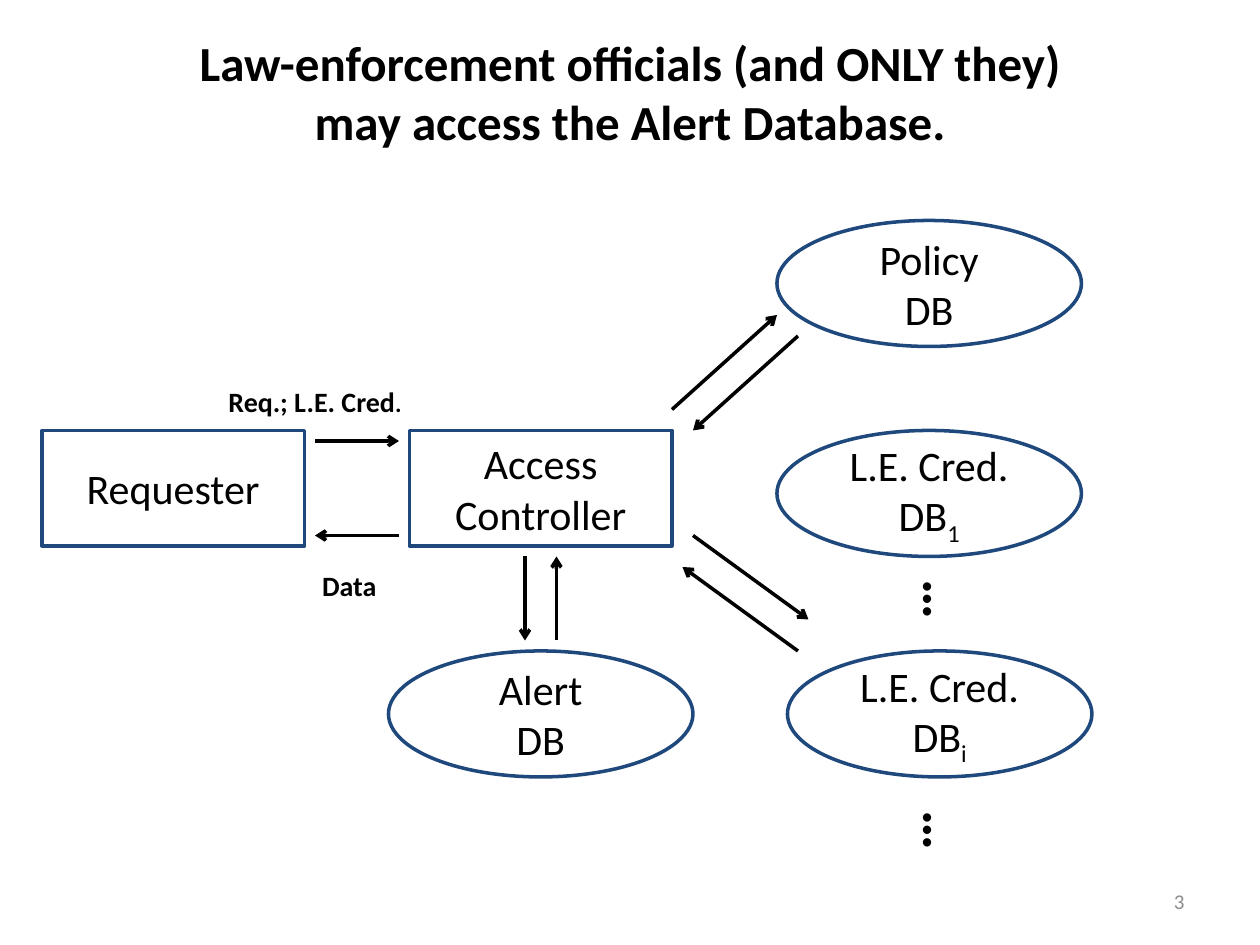
from lxml.etree import SubElement
from pptx import Presentation
from pptx.dml.color import RGBColor
from pptx.enum.shapes import MSO_CONNECTOR as Line, MSO_SHAPE as Shape
from pptx.enum.text import MSO_ANCHOR as Anchor, MSO_AUTO_SIZE as Fit, PP_ALIGN as Align
from pptx.oxml.ns import qn
from pptx.util import Inches, Pt

# Content: each paragraph is a list of (text, format) spans.
# Places are in cells of a grid with 12 cells to the inch.
TITLE = ["Law-enforcement officials (and ONLY they)", "may access the Alert Database."]
BOX_SIZE, DATABASE_SIZE = (25, 11), (29, 12)
SUBSCRIPT = {"baseline": -25}

NODES = [
    (Shape.RECTANGLE, (4, 41), BOX_SIZE, ["Requester"]),
    (Shape.RECTANGLE, (39, 41), BOX_SIZE, ["Access", "Controller"]),
    (Shape.OVAL, (37, 62), DATABASE_SIZE, ["Alert", "DB"]),
    (Shape.OVAL, (74, 21), DATABASE_SIZE, ["Policy", "DB"]),
    (Shape.OVAL, (74, 41), DATABASE_SIZE, ["L.E. Cred.", [("DB", {}), ("1", SUBSCRIPT)]]),
    (Shape.OVAL, (75, 62), DATABASE_SIZE, ["L.E. Cred.", [("DB", {}), ("i", SUBSCRIPT)]]),
]
ARROWS = [  # start, tip
    ((30, 42), (38, 42)), ((38, 51), (30, 51)),  # requester
    ((50, 53), (50, 61)), ((53, 61), (53, 53)),  # alert database
    ((64, 39), (74, 30)), ((76, 32), (66, 41)),  # policy database
    ((66, 51), (77, 59)), ((76, 62), (65, 54)),  # credential databases
]
LABELS = [  # place, left inset in inches, paragraph
    ((19, 36, 28, 4.4), 0.23, [("Req.; L.E. Cred", {}), (".", {"size": 14})]),
    ((29, 53.6, 11, 4.4), 0.14, "Data"),
]
ELLIPSIS_CENTERS = [(90, 57.1), (90, 79.1)]
ELLIPSIS_SIZE = (6.2, 7.7)
PAGE_NUMBER = "3"


def grid(*cells):
    return [Inches(cell / 12) for cell in cells]


def color(hex_text):
    return RGBColor.from_string(hex_text)


def write(frame, paragraphs, size=24, bold=False, ink="000000",
          align=Align.LEFT, anchor=Anchor.TOP, wrap=True):
    frame.word_wrap = wrap
    frame.auto_size = Fit.NONE
    frame.vertical_anchor = anchor
    for index, spans in enumerate(paragraphs):
        para = frame.paragraphs[0] if index == 0 else frame.add_paragraph()
        para.alignment = align
        for text, style in [(spans, {})] if isinstance(spans, str) else spans:
            span = para.add_run()
            span.text = text
            span.font.name = "Calibri"
            span.font.size = Pt(style.get("size", size))
            span.font.bold = bold
            span.font.color.rgb = color(ink)
            if "baseline" in style:
                span._r.get_or_add_rPr().set("baseline", str(style["baseline"] * 1000))


def add_node(page, kind, corner, size, paragraphs):
    node = page.shapes.add_shape(kind, *grid(*corner, *size))
    node.shadow.inherit = False
    node.fill.background()
    node.line.color.rgb = color("1F497D")
    node.line.width = Pt(2)
    write(node.text_frame, paragraphs, align=Align.CENTER, anchor=Anchor.MIDDLE)


def add_arrow(page, start, tip):
    arrow = page.shapes.add_connector(Line.STRAIGHT, *grid(*start, *tip))
    arrow.line.color.rgb = color("000000")
    arrow.line.width = Pt(2)
    SubElement(arrow.line._get_or_add_ln(), qn("a:tailEnd"), type="arrow")
    SubElement(arrow._element.spPr, qn("a:effectLst"))


def add_text(page, place, paragraphs, **style):
    box = page.shapes.add_textbox(*grid(*place))
    write(box.text_frame, paragraphs, **style)
    return box


def main():
    deck = Presentation()
    deck.slide_width, deck.slide_height = Inches(10), Inches(7.5)
    page = deck.slides.add_slide(deck.slide_layouts[5])

    # Title
    title = page.shapes.title
    title.left, title.top, title.width, title.height = grid(0, 2.5, 120, 12.5)
    write(title.text_frame, TITLE, size=28, bold=True, align=Align.CENTER)

    # Diagram
    for node in NODES:
        add_node(page, *node)
    for arrow in ARROWS:
        add_arrow(page, *arrow)

    # Arrow labels
    for place, inset, paragraph in LABELS:
        label = add_text(page, place, [paragraph], size=16, bold=True)
        label.text_frame.margin_left = Inches(inset)

    # Vertical ellipses between the credential databases
    width, height = ELLIPSIS_SIZE
    for x, y in ELLIPSIS_CENTERS:
        place = (x - width / 2, y - height / 2, width, height)
        add_text(page, place, ["…"], size=32, bold=True, wrap=False).rotation = 90

    # Page number
    add_text(page, (86, 83.4, 28, 4.8), [PAGE_NUMBER], size=12, ink="8C8C8C",
             align=Align.RIGHT, anchor=Anchor.MIDDLE)
    deck.save("out.pptx")


if __name__ == "__main__":
    main()
